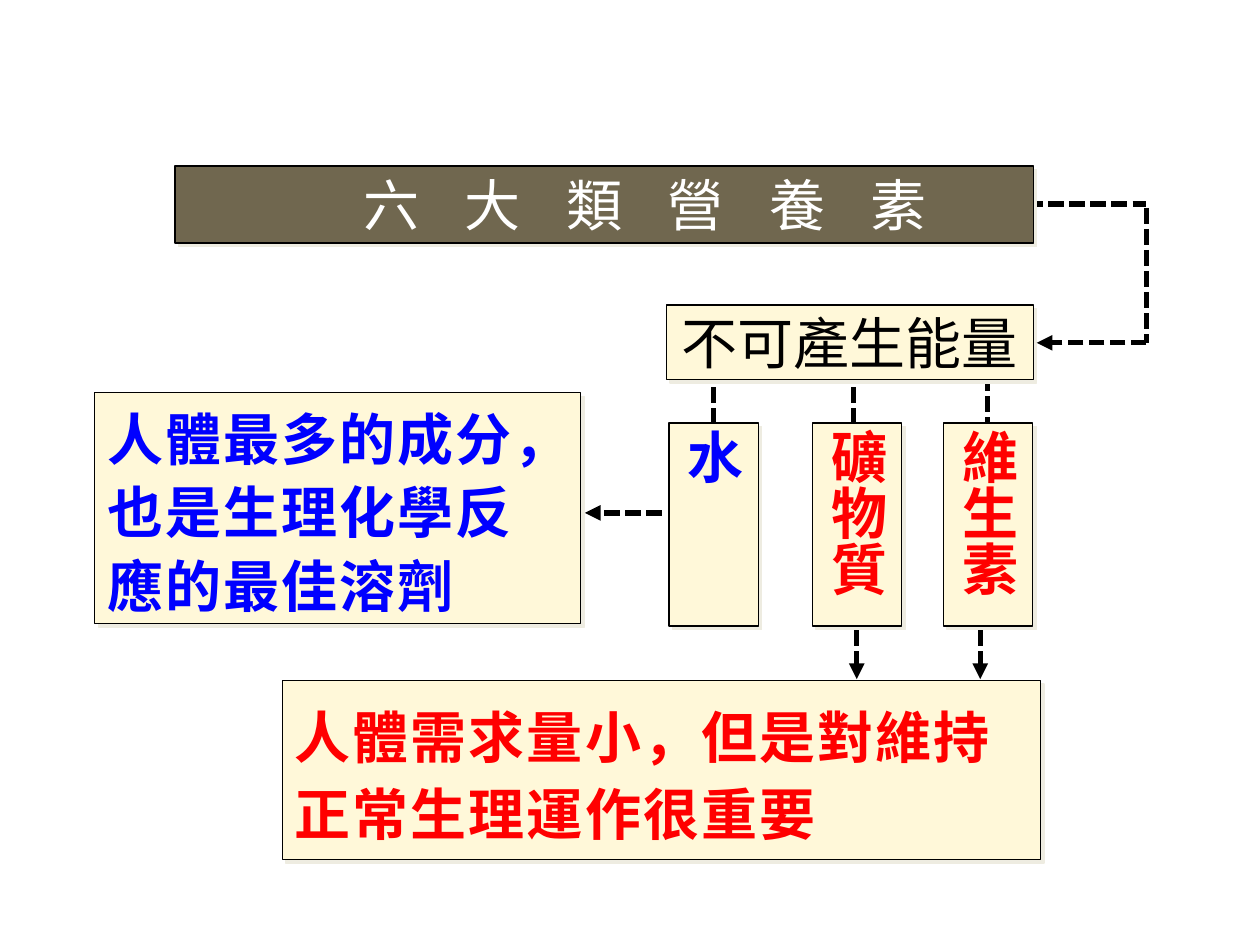
from lxml.etree import SubElement as Sub
from pptx import Presentation
from pptx.dml.color import RGBColor as Rgb
from pptx.enum.dml import MSO_LINE as Dash
from pptx.enum.shapes import MSO_CONNECTOR as Conn, MSO_SHAPE as Shp
from pptx.enum.text import MSO_ANCHOR as Anc, PP_ALIGN as Al
from pptx.oxml.ns import qn
from pptx.util import Cm, Pt

HUES = {"ink": "000000", "white": "FFFFFF", "cream": "FFF8D9",
        "olive": "70674F", "red": "FF0000", "blue": "0000FF",
        "shade": "EEECE1"}
FACE = "Noto Sans CJK SC"


def hue(name):
    return Rgb.from_string(HUES[name])


def put(obj, vals):
    for key, val in vals.items():
        setattr(obj, key, val)


class Deck:
    def __init__(self, wide, high):
        self.prs = Presentation()
        put(self.prs, {"slide_width": Cm(wide), "slide_height": Cm(high)})
        self.slide = self.prs.slides.add_slide(self.prs.slide_layouts[6])
        self.font = {"size": Pt(32), "name": FACE}
        self.frame = {"vertical_anchor": Anc.MIDDLE, "word_wrap": False,
                      "margin_left": Cm(0.25), "margin_right": Cm(0.25),
                      "margin_top": Cm(0.13), "margin_bottom": Cm(0.13)}

    def shade(self, props):
        """Hard offset shadow at the lower right."""
        fx = props.find(qn("a:effectLst"))
        drop = Sub(fx, qn("a:outerShdw"), blurRad="0", dist=str(Pt(2.8)),
                   dir="2700000", algn="ctr", rotWithShape="0")
        Sub(drop, qn("a:srgbClr"), val=HUES["shade"])

    def box(self, x, y, w, h, text, ink="ink", fill="cream", bold=False,
            gap=0, lead=None, align=Al.CENTER, left=0.25, tall=False):
        shp = self.slide.shapes.add_shape(
            Shp.RECTANGLE, Cm(x), Cm(y), Cm(w), Cm(h))
        shp.fill.solid()
        shp.fill.fore_color.rgb = hue(fill)
        shp.line.color.rgb = hue("ink")
        shp.line.width = Pt(0.75)
        shp.shadow.inherit = False
        self.shade(shp.element.spPr)
        body = shp.text_frame
        put(body, {**self.frame, "margin_left": Cm(left)})
        if tall:
            body._txBody.bodyPr.set("vert", "eaVert")
        par = body.paragraphs[0]
        par.text = text
        par.alignment = align
        if lead:
            par.line_spacing = Pt(lead)
        for run in par.runs:
            put(run.font, {**self.font, "bold": bold})
            run.font.color.rgb = hue(ink)
            props = run._r.get_or_add_rPr()
            Sub(props, qn("a:ea"), typeface=FACE)
            if gap:
                props.set("spc", str(int(gap * 100)))

    def line(self, x1, y1, x2, y2, arrow=False):
        con = self.slide.shapes.add_connector(
            Conn.STRAIGHT, Cm(x1), Cm(y1), Cm(x2), Cm(y2))
        con.line.color.rgb = hue("ink")
        put(con.line, {"width": Pt(3), "dash_style": Dash.SQUARE_DOT})
        props = con._element.spPr
        if arrow:
            Sub(props.find(qn("a:ln")), qn("a:tailEnd"), type="triangle")
        Sub(props, qn("a:effectLst"))


def main():
    deck = Deck(25.4, 19.05)

    # Dashed links behind the boxes
    deck.line(10.11, 4.11, 23.11, 4.11)
    for x, top, end in ((17.2, 6.53, 11.91), (14.38, 6.53, 11.13),
                        (19.91, 7.14, 11.53)):
        deck.line(x, top, x, end)

    # Title, group heading and the bend between them
    deck.box(13.44, 6.15, 7.39, 1.5, "不可產生能量")
    deck.line(23.11, 4.19, 23.11, 6.91)
    deck.line(23.11, 6.91, 20.9, 6.91, arrow=True)
    deck.box(3.53, 3.35, 17.3, 1.55, "六大類營養素", "white", "olive",
             gap=26, left=1.9)

    # Arrows to the notes
    for x in (19.76, 17.27):
        deck.line(x, 11.86, x, 13.69, arrow=True)
    deck.line(13.34, 10.34, 11.79, 10.34, arrow=True)

    # Notes
    note = {"bold": True, "gap": 1.2, "align": Al.LEFT}
    deck.box(5.69, 13.72, 15.29, 3.61,
             "人體需求量小，但是對維持\v正常生理運作很重要",
             "red", lead=44, **note)
    deck.box(1.91, 7.92, 9.8, 4.65,
             "人體最多的成分，\v也是生理化學反\v應的最佳溶劑",
             "blue", lead=42, **note)

    # Nutrients in upright boxes
    for x, name, ink in ((16.38, "礦物質", "red"), (19.02, "維生素", "red"),
                         (13.49, "水", "blue")):
        deck.box(x, 8.53, 1.8, 4.09, name, ink, bold=True, lead=38.4,
                 tall=True)

    deck.prs.save("out.pptx")


if __name__ == "__main__":
    main()
